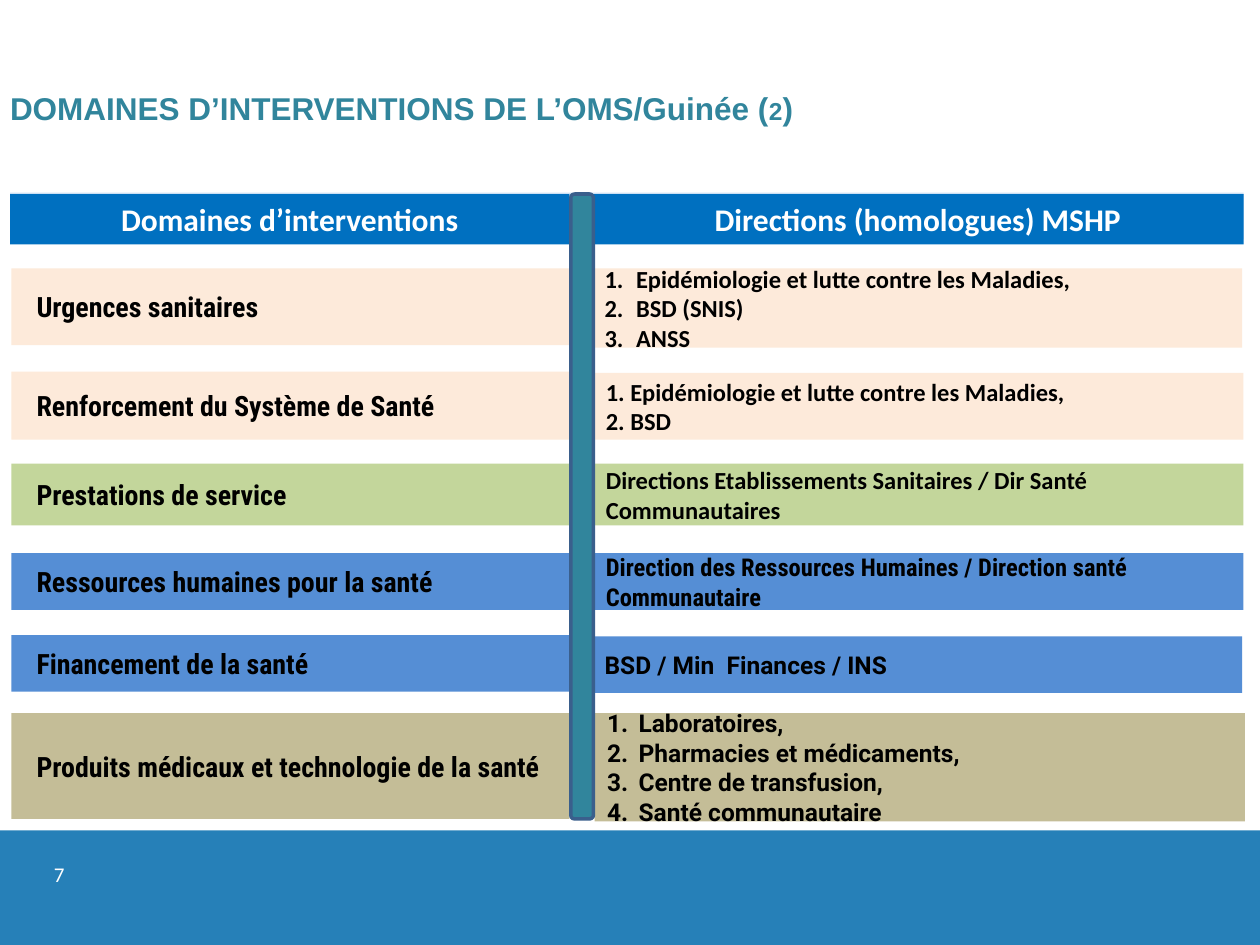
from dataclasses import dataclass

from lxml.etree import SubElement
from pptx import Presentation
from pptx.dml.color import RGBColor
from pptx.enum.shapes import MSO_SHAPE as Shape
from pptx.enum.text import MSO_ANCHOR as Anchor, PP_ALIGN as Align
from pptx.oxml.ns import qn
from pptx.util import Inches, Pt


@dataclass(frozen=True)
class Theme:
    white: str = "FFFFFF"
    black: str = "000000"
    footer: str = "2680B8"
    band: str = "0066CC"
    header: str = "0070C0"
    teal: str = "31859C"
    bar_line: str = "3A5F8C"
    peach: str = "FDEADA"
    green: str = "C3D69B"
    blue: str = "558ED5"
    khaki: str = "C4BD97"
    heading_font: str = "Arial"
    body_font: str = "Calibri"
    condensed_font: str = "Roboto Condensed"
    wide_font: str = "Roboto"
    heading_size: int = 18
    domain_size: int = 16
    direction_size: int = 14
    number_size: int = 12


THEME = Theme()


def write_text(shape, lines, *, font, size, color=THEME.black, bold=True,
               align=Align.LEFT, anchor=Anchor.TOP, insets=(0.1, 0.05, 0.1, 0.05),
               numbered=False, spacing=None):
    frame = shape.text_frame
    frame.word_wrap = True
    frame.vertical_anchor = anchor
    (frame.margin_left, frame.margin_top,
     frame.margin_right, frame.margin_bottom) = map(Inches, insets)
    for index, line in enumerate(lines):
        paragraph = frame.add_paragraph() if index else frame.paragraphs[0]
        paragraph.alignment = align
        paragraph.line_spacing = spacing
        if numbered:
            properties = paragraph._p.get_or_add_pPr()
            properties.set("marL", str(Inches(0.25)))
            properties.set("indent", str(-Inches(0.25)))
            SubElement(properties, qn("a:buFont"), typeface="+mj-lt")
            SubElement(properties, qn("a:buAutoNum"), type="arabicPeriod")
        for text, run_size in [(line, size)] if isinstance(line, str) else line:
            run = paragraph.add_run()
            run.text = text
            run.font.name = font
            run.font.size = Pt(run_size)
            run.font.bold = bold
            run.font.color.rgb = RGBColor.from_string(color)


class SlideBuilder:
    def __init__(self, slide, theme):
        self.slide = slide
        self.theme = theme

    def block(self, box, fill, kind=Shape.RECTANGLE, line=None, opacity=None):
        shape = self.slide.shapes.add_shape(kind, *map(Inches, box))
        shape.shadow.inherit = False
        shape.fill.solid()
        shape.fill.fore_color.rgb = RGBColor.from_string(fill)
        if opacity is not None:
            color = shape.fill._xPr.find(qn("a:solidFill"))[0]
            SubElement(color, qn("a:alpha"), val=str(opacity * 1000))
        if line:
            shape.line.color.rgb = RGBColor.from_string(line)
            shape.line.width = Pt(2)
        else:
            shape.line.fill.background()
        return shape

    def text(self, box, lines, **style):
        write_text(self.slide.shapes.add_textbox(*map(Inches, box)), lines, **style)

    def header(self, box, label):
        write_text(self.block(box, self.theme.header), [label],
                   font=self.theme.body_font, size=self.theme.heading_size,
                   color=self.theme.white, align=Align.CENTER)

    def domain(self, box, fill, label):
        write_text(self.block(box, fill), [label],
                   font=self.theme.condensed_font, size=self.theme.domain_size,
                   anchor=Anchor.MIDDLE, insets=(0.2, 0.1, 0.1, 0.1))

    def directions(self, box, fill, lines, font, numbered):
        write_text(self.block(box, fill), lines, font=font,
                   size=self.theme.direction_size, numbered=numbered,
                   anchor=Anchor.MIDDLE, insets=(0.1, 0.1, 0.2, 0.1))


def main():
    presentation = Presentation()
    presentation.slide_width = Inches(10)
    presentation.slide_height = Inches(7.5)
    slide = presentation.slides.add_slide(presentation.slide_layouts[6])
    theme = THEME
    builder = SlideBuilder(slide, theme)

    builder.block((0, 6.59, 10, 0.91), theme.footer)
    builder.text((0.33, 6.79, 0.83, 0.4), ["7"], font=theme.body_font,
                 size=theme.number_size, color=theme.white, bold=False)
    builder.text((0.01, 0.61, 9, 0.4),
                 [[("DOMAINES D’INTERVENTIONS DE L’OMS/Guinée (", theme.heading_size),
                   ("2", theme.direction_size), (")", theme.heading_size)]],
                 font=theme.heading_font, size=theme.heading_size, color=theme.teal,
                 insets=(0.07, 0.04, 0.07, 0.04), spacing=1.2)

    builder.block((0.08, 1.53, 9.79, 0.37), theme.band, opacity=20)
    builder.header((0.08, 1.54, 4.44, 0.4), "Domaines d’interventions")
    builder.header((4.7, 1.54, 5.17, 0.4), "Directions (homologues) MSHP")

    rows = [
        (2.13, 0.61, 2.13, 0.63, 4.7, theme.peach, "Urgences sanitaires",
         ["Epidémiologie et lutte contre les Maladies,", "BSD (SNIS)", "ANSS"],
         theme.body_font, True),
        (2.95, 0.54, 2.96, 0.53, 4.71, theme.peach, "Renforcement du Système de Santé",
         ["1. Epidémiologie et lutte contre les Maladies,", "2. BSD"],
         theme.body_font, False),
        (3.68, 0.49, 3.68, 0.49, 4.71, theme.green, "Prestations de service",
         ["Directions Etablissements Sanitaires / Dir Santé Communautaires"],
         theme.body_font, False),
        (4.39, 0.45, 4.39, 0.45, 4.71, theme.blue, "Ressources humaines pour la santé",
         ["Direction des Ressources Humaines / Direction santé Communautaire"],
         theme.condensed_font, False),
        (5.04, 0.45, 5.05, 0.45, 4.7, theme.blue, "Financement de la santé",
         ["BSD / Min  Finances / INS"], theme.wide_font, False),
        (5.66, 0.84, 5.66, 0.86, 4.72, theme.khaki,
         "Produits médicaux et technologie de la santé",
         ["Laboratoires,", "Pharmacies et médicaments,", "Centre de transfusion,",
          "Santé communautaire"], theme.wide_font, True),
    ]
    for (domain_top, domain_height, direction_top, direction_height, direction_left,
         fill, label, lines, font, numbered) in rows:
        builder.domain((0.09, domain_top, 4.43, domain_height), fill, label)
        builder.directions((direction_left, direction_top, 5.16, direction_height),
                           fill, lines, font, numbered)

    builder.block((4.53, 1.54, 0.18, 4.96), theme.teal,
                  kind=Shape.ROUNDED_RECTANGLE, line=theme.bar_line)
    presentation.save("out.pptx")


if __name__ == "__main__":
    main()
